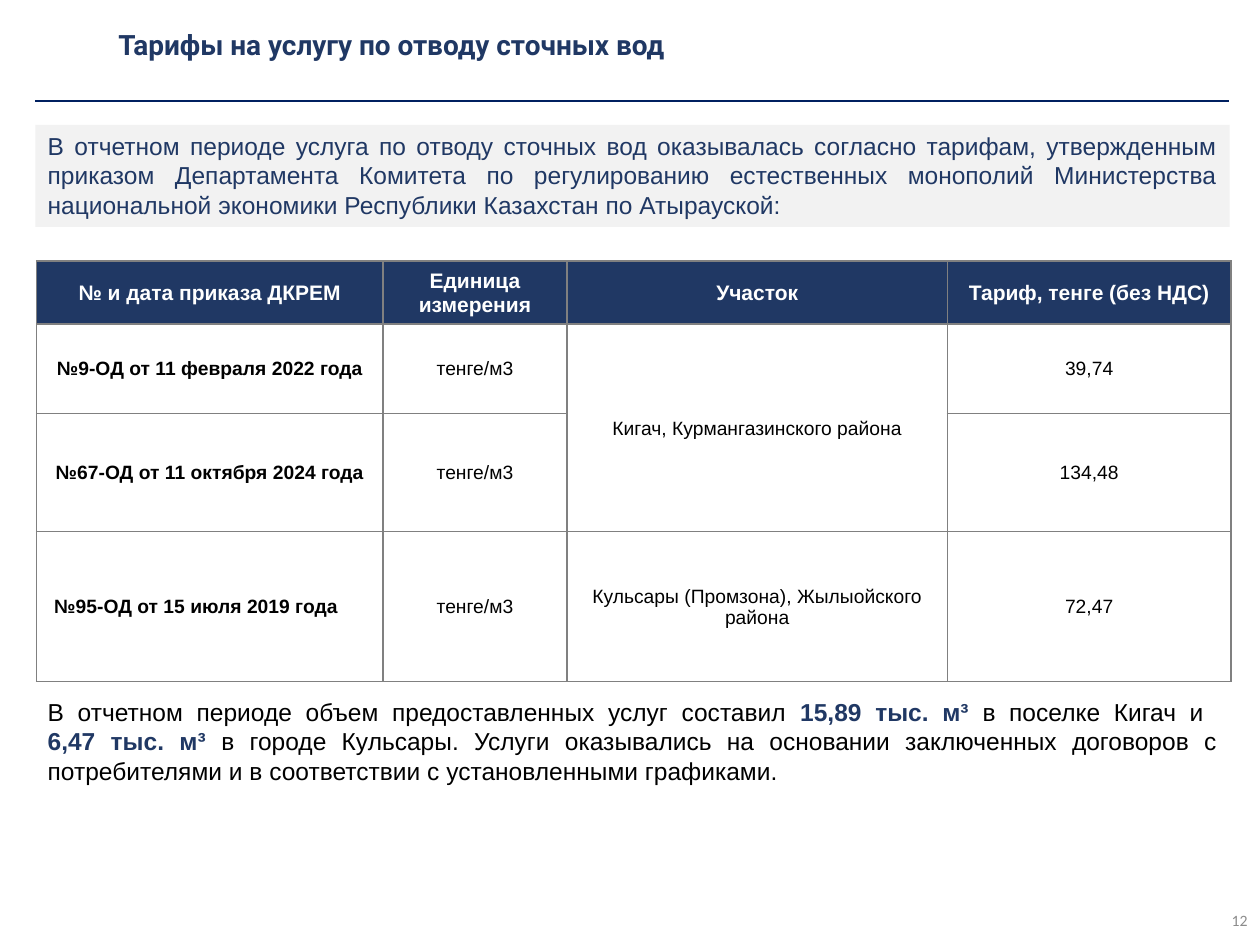
from dataclasses import dataclass

from lxml import etree
from pptx import Presentation
from pptx.dml.color import RGBColor
from pptx.enum.shapes import MSO_CONNECTOR, MSO_SHAPE
from pptx.enum.text import MSO_ANCHOR, MSO_AUTO_SIZE, PP_ALIGN
from pptx.oxml.ns import qn
from pptx.util import Inches, Pt

LEFT, CENTER, RIGHT, JUSTIFY = PP_ALIGN.LEFT, PP_ALIGN.CENTER, PP_ALIGN.RIGHT, PP_ALIGN.JUSTIFY
TOP, MIDDLE = MSO_ANCHOR.TOP, MSO_ANCHOR.MIDDLE
RECT, STRAIGHT = MSO_SHAPE.RECTANGLE, MSO_CONNECTOR.STRAIGHT
NO_FIT = MSO_AUTO_SIZE.NONE

COLORS = {"navy": "203864", "rule": "002060", "panel": "F2F2F2", "grid": "808080",
          "text": "000000", "white": "FFFFFF", "number": "8C8C8C"}
SLIDE_W, SLIDE_H = Inches(10), Inches(7.5)


@dataclass
class Box:
    """A place on the slide, in percent of its width and height."""
    x: float
    y: float
    w: float
    h: float

    def emu(self) -> tuple:
        return (int(SLIDE_W * self.x / 100), int(SLIDE_H * self.y / 100),
                int(SLIDE_W * self.w / 100), int(SLIDE_H * self.h / 100))


@dataclass
class Style:
    size: float
    color: str
    bold: bool = False
    name: str = "Arial"


TITLE = Style(16, "navy", True, "Roboto")
LEAD = Style(14, "navy")
BODY = Style(14, "text")
STRONG = Style(14, "navy", True)
HEAD = Style(12, "white", True)
ORDER = Style(11, "text", True)
CELL = Style(11, "text")
NUMBER = Style(9, "number", name="Calibri")


def rgb(key: str) -> RGBColor:
    return RGBColor.from_string(COLORS[key])


def write(tf, runs: list, align, anchor=TOP) -> None:
    """Fill a text frame with one paragraph of (text, style) runs; None is a line break."""
    for key, value in {"word_wrap": True, "auto_size": NO_FIT, "vertical_anchor": anchor}.items():
        setattr(tf, key, value)
    p = tf.paragraphs[0]
    p.alignment = align
    for run in runs:
        if run is None:
            p.add_line_break()
            continue
        text, style = run
        r = p.add_run()
        r.text = text
        for key, value in {"size": Pt(style.size), "bold": style.bold, "name": style.name}.items():
            setattr(r.font, key, value)
        r.font.color.rgb = rgb(style.color)


def add_text(s, box: Box, runs: list, align, anchor=TOP) -> None:
    write(s.shapes.add_textbox(*box.emu()).text_frame, runs, align, anchor)


def set_borders(cell, color: str) -> None:
    tc_pr = cell._tc.get_or_add_tcPr()
    for side in ("a:lnL", "a:lnR", "a:lnT", "a:lnB"):
        ln = etree.SubElement(tc_pr, qn(side), w=str(Pt(1)))
        fill = etree.SubElement(ln, qn("a:solidFill"))
        etree.SubElement(fill, qn("a:srgbClr"), val=COLORS[color])


def format_cell(cell, text: str, style: Style, align, indent: float) -> None:
    margins = {"margin_left": Inches(indent), "margin_right": Inches(0.01),
               "margin_top": Inches(0.01), "margin_bottom": 0}
    for key, value in margins.items():
        setattr(cell, key, value)
    cell.vertical_anchor = MIDDLE
    set_borders(cell, "grid")
    if style is HEAD:
        cell.fill.solid()
        cell.fill.fore_color.rgb = rgb("navy")
    else:
        cell.fill.background()
    if text:
        p = cell.text_frame.paragraphs[0]
        p.alignment = align
        r = p.add_run()
        r.text = text
        for key, value in {"size": Pt(style.size), "bold": style.bold, "name": style.name}.items():
            setattr(r.font, key, value)
        r.font.color.rgb = rgb(style.color)


def add_tariffs(s, x: float, y: float, cols: list, heights: list, rows: list) -> None:
    box = Box(x, y, sum(cols), sum(heights))
    tbl = s.shapes.add_table(len(rows), len(cols), *box.emu()).table
    tbl.horz_banding = False
    for col, share in zip(tbl.columns, cols):
        col.width = int(SLIDE_W * share / 100)
    for row, share in zip(tbl.rows, heights):
        row.height = int(SLIDE_H * share / 100)
    tbl.cell(1, 2).merge(tbl.cell(2, 2))
    last = len(rows) - 1
    for i, row in enumerate(rows):
        for j, text in enumerate(row):
            style = HEAD if i == 0 else ORDER if j == 0 else CELL
            shifted = i == last and j == 0
            format_cell(tbl.cell(i, j), text, style,
                        JUSTIFY if shifted else CENTER, 0.14 if shifted else 0.01)


def main() -> None:
    prs = Presentation()
    prs.slide_width, prs.slide_height = SLIDE_W, SLIDE_H
    s = prs.slides.add_slide(prs.slide_layouts[5])

    # Title and the rule below it
    title = s.shapes.title
    title.left, title.top, title.width, title.height = Box(8.4, 1.9, 89.3, 5.6).emu()
    write(title.text_frame, [("Тарифы на услугу по отводу сточных вод", TITLE)], LEFT, MIDDLE)
    x, y, w, _ = Box(2.8, 10.7, 94.7, 0).emu()
    rule = s.shapes.add_connector(STRAIGHT, x, y, x + w, y)
    rule.line.color.rgb = rgb("rule")
    rule.line.width = Pt(1)
    etree.SubElement(rule._element.spPr, qn("a:effectLst"))

    # Introduction on a grey panel
    sp = s.shapes.add_shape(RECT, *Box(2.8, 13.2, 94.8, 10.8).emu())
    sp.shadow.inherit = False
    sp.fill.solid()
    sp.fill.fore_color.rgb = rgb("panel")
    sp.line.fill.background()
    write(sp.text_frame, [(
        "В отчетном периоде услуга по отводу сточных вод оказывалась согласно тарифам, "
        "утвержденным приказом Департамента Комитета по регулированию естественных монополий "
        "Министерства национальной экономики Республики Казахстан по Атырауской:", LEAD)], JUSTIFY)

    # Tariff table
    unit = "тенге/м3"
    add_tariffs(s, 2.9, 27.6, [27.5, 14.6, 30.2, 22.5], [6.67, 9.47, 12.53, 15.87], [
        ["№ и дата приказа ДКРЕМ", "Единица измерения", "Участок", "Тариф, тенге (без НДС)"],
        ["№9-ОД от 11 февраля 2022 года", unit, "Кигач, Курмангазинского района", "39,74"],
        ["№67-ОД от 11 октября 2024 года", unit, "", "134,48"],
        ["№95-ОД от 15 июля 2019 года", unit, "Кульсары (Промзона), Жылыойского района", "72,47"],
    ])

    # Volumes and slide number
    add_text(s, Box(2.8, 73.1, 94.8, 10.8), [
        ("В отчетном периоде объем предоставленных услуг составил ", BODY),
        ("15,89 тыс. м³ ", STRONG),
        ("в поселке Кигач и ", BODY),
        None,
        ("6,47 тыс. м³ ", STRONG),
        ("в городе Кульсары. Услуги оказывались на основании заключенных договоров "
         "с потребителями и в соответствии с установленными графиками.", BODY)], JUSTIFY)
    add_text(s, Box(77.5, 94.7, 22.5, 5.3), [("12", NUMBER)], RIGHT, MIDDLE)

    prs.save("out.pptx")


if __name__ == "__main__":
    main()
